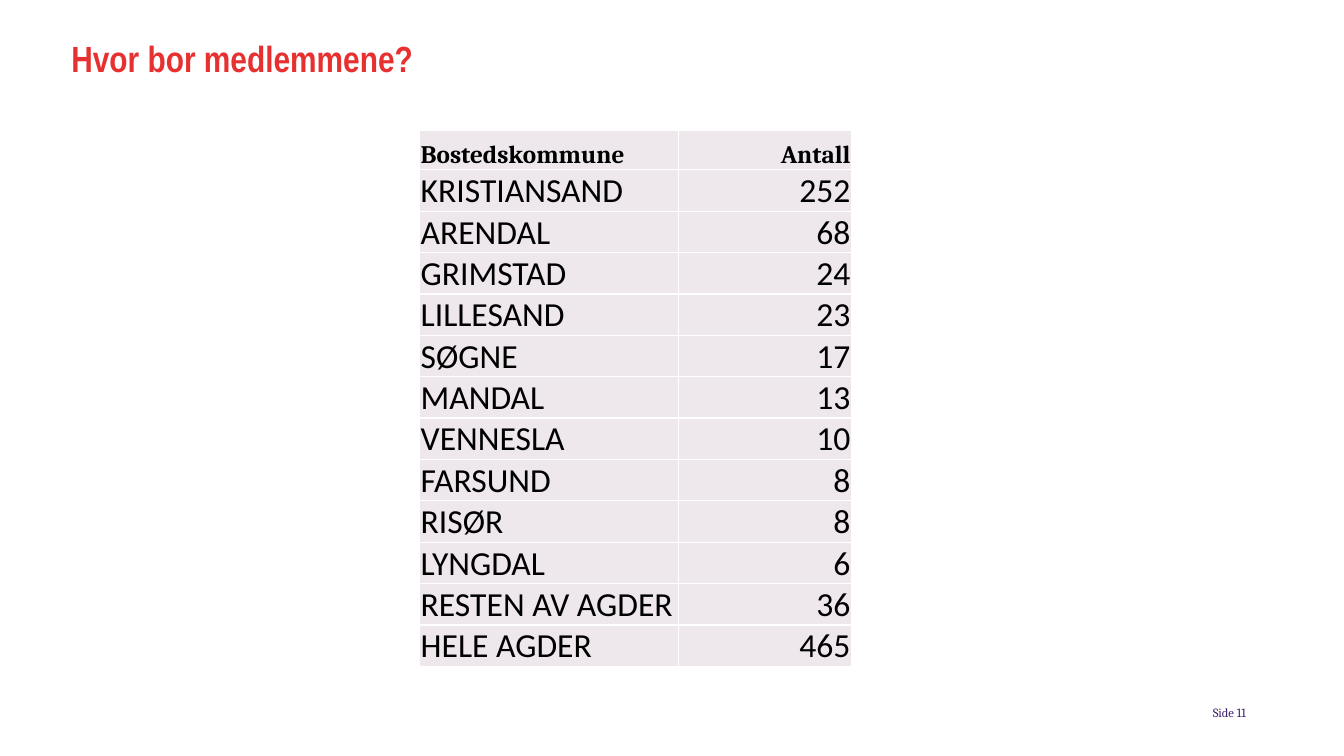
from pptx import Presentation
from pptx.dml.color import RGBColor
from pptx.enum.text import MSO_ANCHOR as Anchor, PP_ALIGN as Align
from pptx.oxml import parse_xml
from pptx.oxml.ns import nsdecls
from pptx.util import Pt

RED = RGBColor(0xE7, 0x31, 0x30)
PURPLE = RGBColor(0x3F, 0x1F, 0x71)
BLACK = RGBColor(0x00, 0x00, 0x00)
CELL_FILL = RGBColor(0xEE, 0xE8, 0xED)
BORDER = RGBColor(0xFF, 0xFF, 0xFF)

MEMBERS = [
    ("Bostedskommune", "Antall"),
    ("KRISTIANSAND", "252"),
    ("ARENDAL", "68"),
    ("GRIMSTAD", "24"),
    ("LILLESAND", "23"),
    ("SØGNE", "17"),
    ("MANDAL", "13"),
    ("VENNESLA", "10"),
    ("FARSUND", "8"),
    ("RISØR", "8"),
    ("LYNGDAL", "6"),
    ("RESTEN AV AGDER", "36"),
    ("HELE AGDER", "465"),
]
COLUMN_WIDTHS = [Pt(185), Pt(123.5)]
ROW_HEIGHT = Pt(28)


def write(paragraph, text, font_name, size, color, bold=False, align=Align.LEFT):
    paragraph.alignment = align
    run = paragraph.add_run()
    run.text = text
    run.font.name = font_name
    run.font.size = Pt(size)
    run.font.bold = bold
    run.font.color.rgb = color


def set_frame(frame, anchor):
    frame.margin_left = frame.margin_right = Pt(0)
    frame.margin_top = frame.margin_bottom = Pt(0)
    frame.vertical_anchor = anchor
    frame.word_wrap = True


presentation = Presentation()
presentation.slide_width = Pt(960)
presentation.slide_height = Pt(540)
slide = presentation.slides.add_slide(presentation.slide_layouts[5])

# Title
title = slide.shapes.title
title.left, title.top, title.width, title.height = Pt(51), Pt(28), Pt(621.5), Pt(58)
set_frame(title.text_frame, Anchor.TOP)
heading = title.text_frame.paragraphs[0]
heading.line_spacing = Pt(29)
write(heading, "Hvor bor medlemmene?", "Arial Narrow", 26, RED, bold=True)

# Page number
page_box = slide.shapes.add_textbox(Pt(674), Pt(503.5), Pt(216), Pt(11))
set_frame(page_box.text_frame, Anchor.MIDDLE)
write(page_box.text_frame.paragraphs[0], "Side 11", "Cambria", 9, PURPLE, align=Align.RIGHT)

# Members by municipality
table = slide.shapes.add_table(
    len(MEMBERS), len(COLUMN_WIDTHS), Pt(299.75), Pt(93.25),
    sum(COLUMN_WIDTHS), ROW_HEIGHT * len(MEMBERS),
).table
table.horz_banding = False
for column, width in zip(table.columns, COLUMN_WIDTHS):
    column.width = width

for row_index, values in enumerate(MEMBERS):
    table.rows[row_index].height = ROW_HEIGHT
    is_header = row_index == 0
    font_name, size = ("Cambria", 18) if is_header else ("Calibri", 24)
    for column_index, value in enumerate(values):
        cell = table.cell(row_index, column_index)
        cell.margin_left = cell.margin_right = cell.margin_top = Pt(0.75)
        cell.margin_bottom = Pt(0)
        cell.vertical_anchor = Anchor.BOTTOM
        cell_properties = cell._tc.get_or_add_tcPr()
        for side in ("lnL", "lnR", "lnT", "lnB"):
            cell_properties.append(parse_xml(
                f'<a:{side} {nsdecls("a")} w="{Pt(1)}"><a:solidFill>'
                f'<a:srgbClr val="{BORDER}"/></a:solidFill></a:{side}>'
            ))
        cell.fill.solid()
        cell.fill.fore_color.rgb = CELL_FILL
        align = Align.RIGHT if column_index == 1 else Align.LEFT
        write(cell.text_frame.paragraphs[0], value, font_name, size, BLACK,
              bold=is_header, align=align)

presentation.save("out.pptx")
